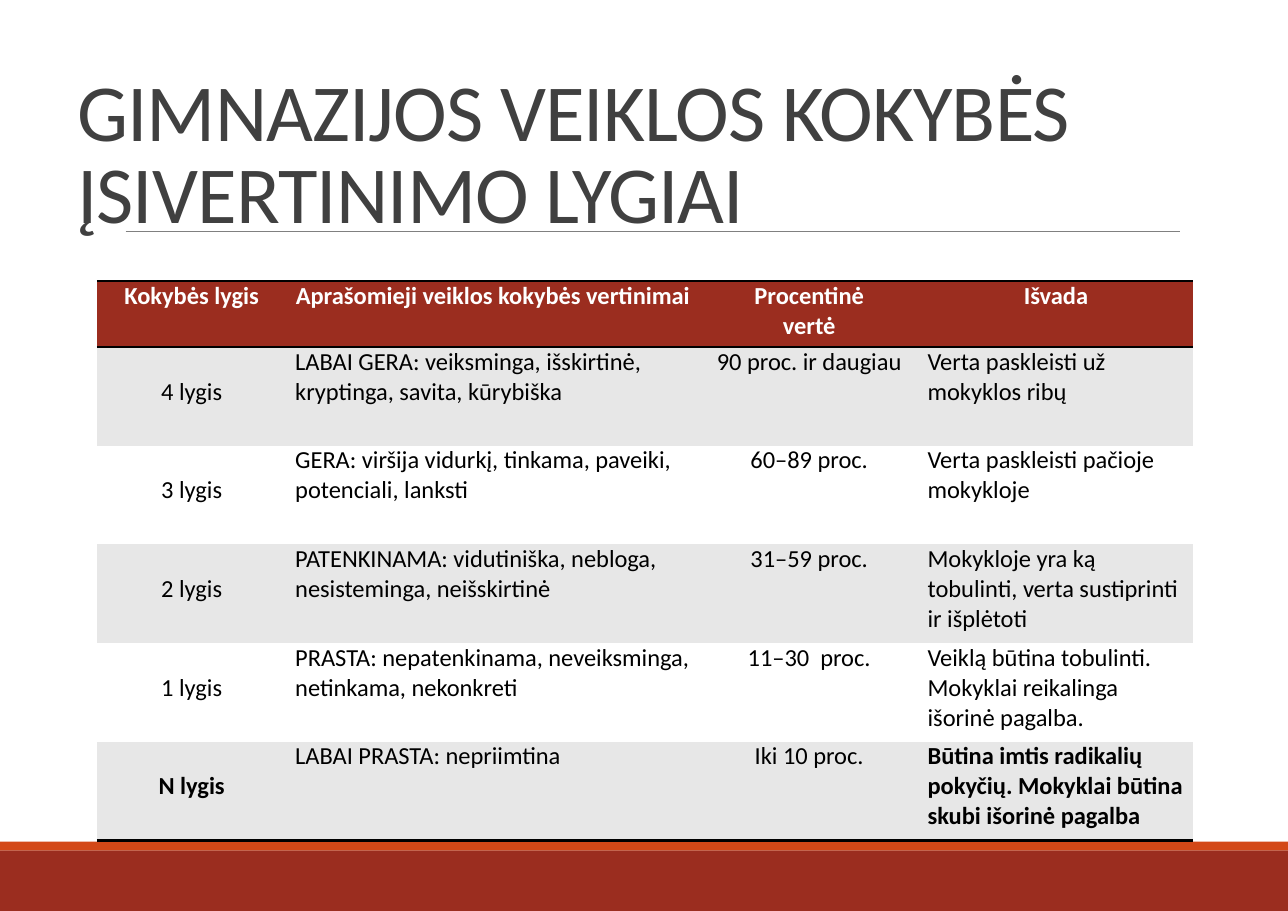
import pptx
import pptx.dml.color
import pptx.enum.shapes
import pptx.enum.text
import pptx.oxml.ns
import pptx.util
from lxml import etree

Inches = pptx.util.Inches
Pt = pptx.util.Pt
RGBColor = pptx.dml.color.RGBColor
ALIGN = pptx.enum.text.PP_ALIGN
qn = pptx.oxml.ns.qn

BRICK = RGBColor(0x9B, 0x2D, 0x1F)
ORANGE = RGBColor(0xD3, 0x48, 0x17)
RULE_GRAY = RGBColor(0x80, 0x80, 0x80)
TITLE_GRAY = RGBColor(0x40, 0x40, 0x40)
BAND_GRAY = RGBColor(0xE7, 0xE7, 0xE7)
WHITE = RGBColor(0xFF, 0xFF, 0xFF)
BLACK = RGBColor(0, 0, 0)

SLIDE_WIDTH, SLIDE_HEIGHT = 11.69, 8.27
FONT = "Calibri"
TITLE = "GIMNAZIJOS VEIKLOS KOKYBĖS ĮSIVERTINIMO LYGIAI"
COLUMN_WIDTHS = [1.72, 3.75, 1.99, 2.49]
COLUMN_ALIGNMENTS = [ALIGN.CENTER, ALIGN.LEFT, ALIGN.CENTER, ALIGN.LEFT]
HEADER_HEIGHT = 0.6
LINE_HEIGHT = 0.27
LEVELS = [
    ["Kokybės lygis", "Aprašomieji veiklos kokybės vertinimai",
     "Procentinė\nvertė", "Išvada"],
    ["4 lygis", "LABAI GERA: veiksminga, išskirtinė, kryptinga, savita, kūrybiška",
     "90 proc. ir daugiau", "Verta paskleisti už mokyklos ribų"],
    ["3 lygis", "GERA: viršija vidurkį, tinkama, paveiki, potenciali, lanksti",
     "60–89 proc.", "Verta paskleisti pačioje mokykloje"],
    ["2 lygis", "PATENKINAMA: vidutiniška, nebloga, nesisteminga, neišskirtinė",
     "31–59 proc.", "Mokykloje yra ką tobulinti, verta sustiprinti ir išplėtoti"],
    ["1 lygis", "PRASTA: nepatenkinama, neveiksminga, netinkama, nekonkreti",
     "11–30  proc.", "Veiklą būtina tobulinti. Mokyklai reikalinga išorinė pagalba."],
    ["N lygis", "LABAI PRASTA: nepriimtina",
     "Iki 10 proc.", "Būtina imtis radikalių pokyčių. Mokyklai būtina skubi išorinė pagalba"],
]
LAST_ROW = len(LEVELS) - 1


def set_format(target, values):
    for name, value in values.items():
        setattr(target, name, value)


def set_font(font, color, **values):
    set_format(font, {"name": FONT, **values})
    font.color.rgb = color


def add_footer(slide, left, top, width, height):
    """Thin orange stripe on top of a brick band."""
    stripe = 0.08
    for color, offset, depth in [(BRICK, stripe, height - stripe), (ORANGE, 0, stripe)]:
        band = slide.shapes.add_shape(
            pptx.enum.shapes.MSO_SHAPE.RECTANGLE,
            Inches(left), Inches(top + offset), Inches(width), Inches(depth))
        band.shadow.inherit = False
        band.fill.solid()
        band.fill.fore_color.rgb = color
        band.line.fill.background()


def add_rule(slide, left, top, width):
    rule = slide.shapes.add_connector(
        pptx.enum.shapes.MSO_CONNECTOR.STRAIGHT,
        Inches(left), Inches(top), Inches(left + width), Inches(top))
    rule.line.color.rgb = RULE_GRAY
    rule.line.width = Pt(0.5)
    etree.SubElement(rule.element.spPr, qn("a:effectLst"))


def add_title(slide, left, top, width, height):
    title = slide.shapes.title
    set_format(title, {"left": Inches(left), "top": Inches(top),
                       "width": Inches(width), "height": Inches(height)})
    set_format(title.text_frame, {
        "text": TITLE, "word_wrap": True,
        "auto_size": pptx.enum.text.MSO_AUTO_SIZE.NONE,
        "vertical_anchor": pptx.enum.text.MSO_ANCHOR.BOTTOM})
    paragraph = title.text_frame.paragraphs[0]
    set_format(paragraph, {"alignment": ALIGN.LEFT, "line_spacing": 0.85})
    font = paragraph.runs[0].font
    set_font(font, TITLE_GRAY, size=Pt(52.9))
    paragraph.runs[0].font._element.set("spc", "-60")
    # Bring the title in front of the rule
    title.element.getparent().append(title.element)


def set_borders(cell, black_sides):
    properties = cell._tc.get_or_add_tcPr()
    for side in "LRTB":
        line = etree.SubElement(properties, qn(f"a:ln{side}"))
        if side in black_sides:
            line.set("w", str(Pt(2)))
            fill = etree.SubElement(line, qn("a:solidFill"))
            etree.SubElement(fill, qn("a:srgbClr")).set("val", str(BLACK))
        else:
            etree.SubElement(line, qn("a:noFill"))


def fill_cell(cell, row, column):
    is_header = row == 0
    is_level = column == 0 and not is_header
    is_bold = is_header or (row == LAST_ROW and column in (0, 3))
    # Black lines frame the header and close the table
    set_borders(cell, {0: "TB", 1: "T", LAST_ROW: "B"}.get(row, ""))
    cell.fill.solid()
    cell.fill.fore_color.rgb = BRICK if is_header else BAND_GRAY if row % 2 else WHITE
    # Level names sit one line lower than the other columns
    set_format(cell, {
        "text": LEVELS[row][column],
        "margin_left": Inches(0.08), "margin_right": Inches(0.08),
        "margin_top": Inches(LINE_HEIGHT if is_level else 0), "margin_bottom": 0})
    for paragraph in cell.text_frame.paragraphs:
        paragraph.alignment = ALIGN.CENTER if is_header else COLUMN_ALIGNMENTS[column]
        for run in paragraph.runs:
            set_font(run.font, WHITE if is_header else BLACK, size=Pt(16), bold=is_bold)


def add_levels_table(slide, left, top, width, height):
    table = slide.shapes.add_table(
        len(LEVELS), len(COLUMN_WIDTHS),
        Inches(left), Inches(top), Inches(width), Inches(height)).table
    set_format(table, {"first_row": False, "horz_banding": False})
    for column, column_width in zip(table.columns, COLUMN_WIDTHS):
        column.width = Inches(column_width)
    level_height = (height - HEADER_HEIGHT) / LAST_ROW
    for row_index, row in enumerate(table.rows):
        row.height = Inches(level_height if row_index else HEADER_HEIGHT)
        for column_index, cell in enumerate(row.cells):
            fill_cell(cell, row_index, column_index)


def main():
    presentation = pptx.Presentation()
    set_format(presentation, {"slide_width": Inches(SLIDE_WIDTH),
                              "slide_height": Inches(SLIDE_HEIGHT)})
    slide = presentation.slides.add_slide(presentation.slide_layouts[5])
    add_footer(slide, 0, 7.64, SLIDE_WIDTH, SLIDE_HEIGHT - 7.64)
    add_rule(slide, 1.14, 2.1, 9.57)
    add_title(slide, 0.6, 0.3, 9.94, 1.93)
    add_levels_table(slide, 0.88, 2.55, sum(COLUMN_WIDTHS), 5.08)
    presentation.save("out.pptx")


if __name__ == "__main__":
    main()
